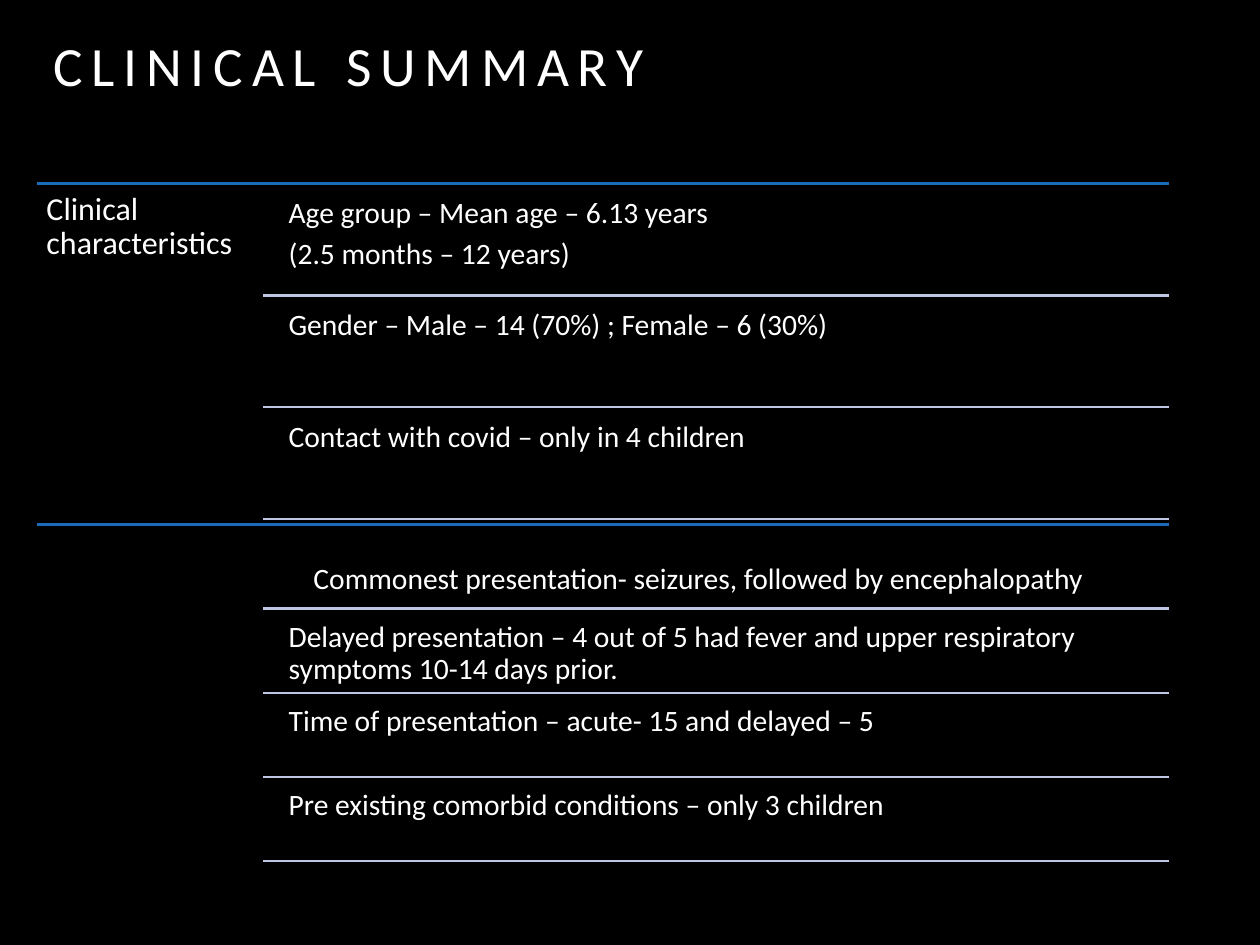
from dataclasses import dataclass

from lxml.etree import SubElement
from pptx import Presentation
from pptx.dml.color import RGBColor
from pptx.enum.shapes import MSO_CONNECTOR
from pptx.enum.text import MSO_ANCHOR, PP_ALIGN
from pptx.oxml.ns import qn
from pptx.util import Pt


@dataclass(frozen=True)
class Theme:
    background: RGBColor = RGBColor(0x00, 0x00, 0x00)
    text: RGBColor = RGBColor(0xFF, 0xFF, 0xFF)
    section_rule: RGBColor = RGBColor(0x1B, 0x6B, 0xBC)
    row_rule: RGBColor = RGBColor(0xBD, 0xC7, 0xE1)
    font: str = "Calibri"
    title_size: float = 45
    heading_size: float = 26
    body_size: float = 24
    rule_width: float = 2


@dataclass(frozen=True)
class Box:
    left: float
    top: float
    width: float
    height: float


THEME = Theme()


def add_text(page, box, lines, size, inset=0.0, line_spacing=None, space_after=0,
             spacing=0, align=PP_ALIGN.LEFT, anchor=MSO_ANCHOR.TOP, wrap=True):
    shape = page.shapes.add_textbox(Pt(box.left), Pt(box.top), Pt(box.width), Pt(box.height))
    frame = shape.text_frame
    frame.word_wrap = wrap
    frame.vertical_anchor = anchor
    frame.margin_left = frame.margin_right = Pt(inset)
    frame.margin_top = frame.margin_bottom = Pt(inset)
    for index, line in enumerate(lines):
        para = frame.add_paragraph() if index else frame.paragraphs[0]
        para.alignment = align
        para.line_spacing = line_spacing
        para.space_after = Pt(space_after)
        span = para.add_run()
        span.text = line
        span.font.name = THEME.font
        span.font.size = Pt(size)
        span.font.color.rgb = THEME.text
        if spacing:
            span.font._element.set("spc", str(round(spacing * 100)))


def add_rule(page, left, right, top, color):
    rule = page.shapes.add_connector(MSO_CONNECTOR.STRAIGHT, Pt(left), Pt(top), Pt(right), Pt(top))
    rule.line.color.rgb = color
    rule.line.width = Pt(THEME.rule_width)
    SubElement(rule._element.spPr, qn("a:effectLst"))


def add_title(page, box, title):
    add_text(page, box, [title], THEME.title_size, spacing=7.2)


def add_section(page, box, heading, rows, pitch, gap):
    right = box.left + box.width
    rule_left = box.left + 183.6
    text_left = box.left + 197.3
    add_rule(page, box.left, right, box.top, THEME.section_rule)
    if heading:
        heading_box = Box(box.left, box.top, 184.3, box.height)
        add_text(page, heading_box, [heading], THEME.heading_size, 7.6, 0.9, 9)
    for index, lines in enumerate(rows):
        row_top = box.top + index * pitch
        if lines:
            row_box = Box(text_left, row_top + gap, right - text_left, pitch - gap)
            add_text(page, row_box, lines, THEME.body_size, 7.2, 0.9, 8)
        add_rule(page, rule_left, right, row_top + pitch, THEME.row_rule)


def add_centred_finding(page, box, finding):
    add_text(page, box, [finding], THEME.body_size, 4,
             align=PP_ALIGN.CENTER, anchor=MSO_ANCHOR.MIDDLE, wrap=False)


def main():
    deck = Presentation()
    deck.slide_width, deck.slide_height = Pt(1024), Pt(768)
    page = deck.slides.add_slide(deck.slide_layouts[6])
    page.background.fill.solid()
    page.background.fill.fore_color.rgb = THEME.background

    add_title(page, Box(43.2, 25.2, 928.8, 90), "CLINICAL SUMMARY")
    add_section(page, Box(30.2, 149, 919.5, 277.2), "Clinical characteristics", [
        ["Age group – Mean age – 6.13 years", "(2.5 months – 12 years)"],
        ["Gender – Male – 14 (70%) ; Female – 6 (30%)"],
        ["Contact with covid – only in 4 children"],
    ], pitch=91, gap=4.4)
    add_section(page, Box(30.2, 426.2, 919.5, 277.2), None, [
        [],
        ["Delayed presentation – 4 out of 5 had fever and upper respiratory symptoms 10-14 days prior."],
        ["Time of presentation – acute- 15 and delayed – 5"],
        ["Pre existing comorbid conditions – only 3 children"],
    ], pitch=68.4, gap=3.5)
    add_centred_finding(page, Box(205.2, 450.7, 724.3, 37.4),
                        "Commonest presentation- seizures, followed by encephalopathy")
    deck.save("out.pptx")


if __name__ == "__main__":
    main()
